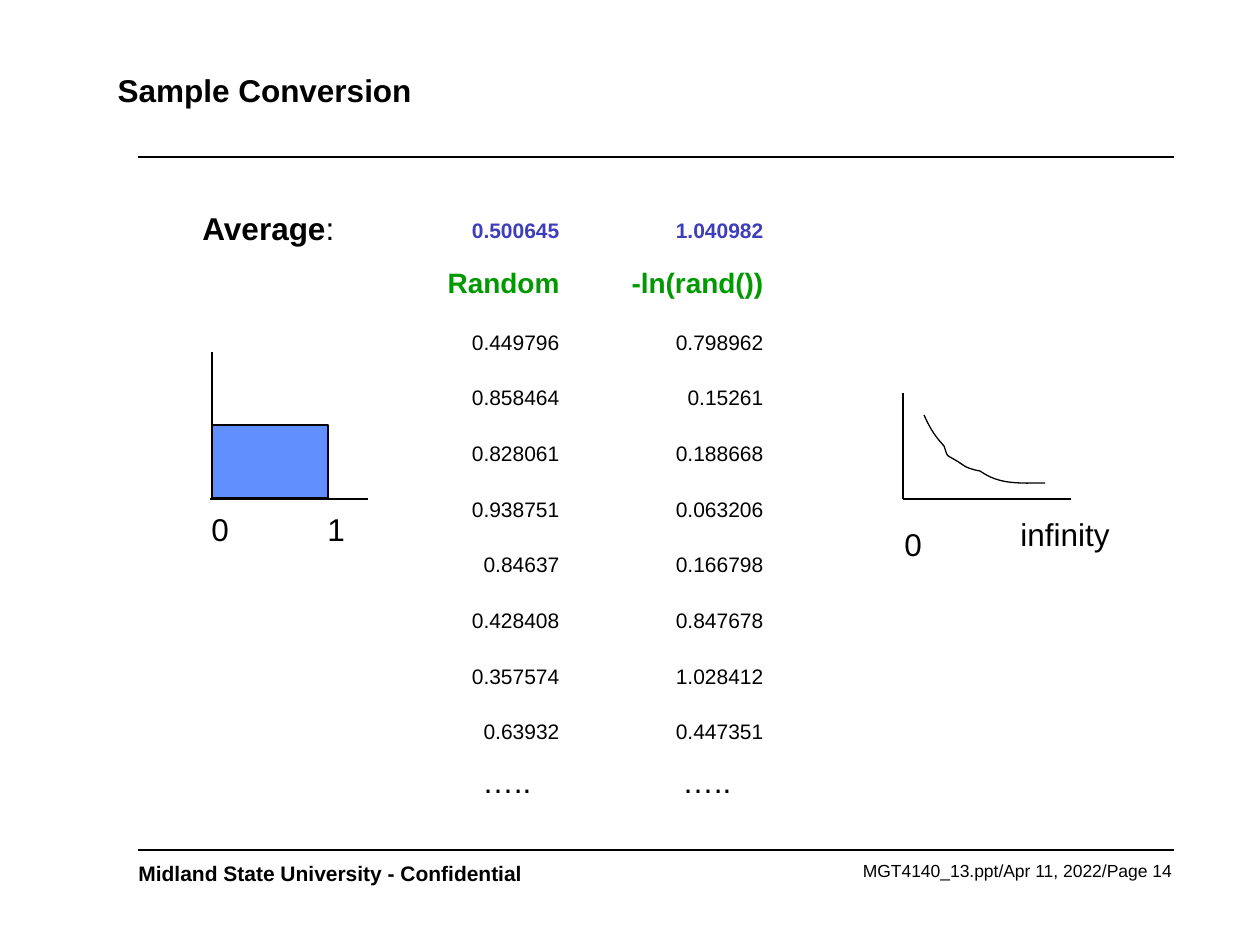
from lxml import etree
from pptx import Presentation
from pptx.dml.color import RGBColor
from pptx.enum.shapes import MSO_CONNECTOR, MSO_SHAPE
from pptx.enum.text import MSO_ANCHOR, MSO_AUTO_SIZE, PP_ALIGN
from pptx.oxml.ns import qn
from pptx.util import Emu, Pt

STRAIGHT = MSO_CONNECTOR.STRAIGHT
RECT = MSO_SHAPE.RECTANGLE
MIDDLE, BOTTOM = MSO_ANCHOR.MIDDLE, MSO_ANCHOR.BOTTOM
NONE, GROW = MSO_AUTO_SIZE.NONE, MSO_AUTO_SIZE.SHAPE_TO_FIT_TEXT
LEFT, RIGHT = PP_ALIGN.LEFT, PP_ALIGN.RIGHT

FONT = "Arial"
BLACK, BLUE, INDIGO, GREEN = "000000", "618FFD", "3E3EBC", "009900"
SCALE = 914400 / 126

ROWS = [
    ("0.500645", "1.040982"),
    ("Random", "-ln(rand())"),
    ("0.449796", "0.798962"),
    ("0.858464", "0.15261"),
    ("0.828061", "0.188668"),
    ("0.938751", "0.063206"),
    ("0.84637", "0.166798"),
    ("0.428408", "0.847678"),
    ("0.357574", "1.028412"),
    ("0.63932", "0.447351"),
]
HEADS = [
    {"size": 12, "color": INDIGO, "bold": True},
    {"size": 16, "color": GREEN, "bold": True},
]
BODY = {"size": 12}
START = (924, 415)
BENDS = [
    ((930, 428), (934, 435), (944, 446)),
    ((949, 460), (944, 452), (963, 465)),
    ((968, 469), (980, 471), (980, 471)),
    ((1000, 485), (1019, 483), (1045, 483)),
]


def px(*nums):
    """Turn pixel lengths into EMU."""
    return [Emu(round(n * SCALE)) for n in nums]


def tint(code):
    """Turn a hex string into a colour."""
    return RGBColor.from_string(code)


def write(frame, text, size=18, color=BLACK, bold=False, align=LEFT):
    """Add a formatted run to the first paragraph of a frame."""
    para = frame.paragraphs[0]
    para.alignment = align
    run = para.add_run()
    run.text = text
    font = run.font
    font.name, font.size, font.bold = FONT, Pt(size), bold
    font.color.rgb = tint(color)


def label(shapes, text, x, y, w, h=50, wrap=False, **form):
    """Add a text box and return its frame."""
    frame = shapes.add_textbox(*px(x, y, w, h)).text_frame
    frame.word_wrap = wrap
    frame.auto_size = GROW
    write(frame, text, **form)
    return frame


def stroke(shape, width=0.75):
    """Give a shape a black outline."""
    shape.line.color.rgb = tint(BLACK)
    shape.line.width = Pt(width)


def rule(shapes, x1, y1, x2, y2, width=0.75):
    """Draw a straight black line."""
    line = shapes.add_connector(STRAIGHT, *px(x1, y1, x2, y2))
    stroke(line, width)
    etree.SubElement(line._element.spPr, qn("a:effectLst"))


def trace(start, bends, steps=12):
    """Sample points along a chain of cubic curves."""
    spots = []
    for a, b, c in bends:
        for i in range(1, steps + 1):
            t = i / steps
            u = 1 - t
            spots.append(tuple(
                u**3 * p + 3 * u * u * t * q + 3 * u * t * t * r + t**3 * s
                for p, q, r, s in zip(start, a, b, c)))
        start = c
    return spots


def curve(shapes, start, bends):
    """Draw an open curve."""
    pen = shapes.build_freeform(*px(*start))
    pen.add_line_segments([px(*spot) for spot in trace(start, bends)], close=False)
    shape = pen.convert_to_shape()
    shape.fill.background()
    shape.shadow.inherit = False
    stroke(shape)


def block(shapes, x, y, w, h):
    """Draw a filled bar."""
    bar = shapes.add_shape(RECT, *px(x, y, w, h))
    bar.shadow.inherit = False
    bar.fill.solid()
    bar.fill.fore_color.rgb = tint(BLUE)
    stroke(bar)


def grid(shapes, rows, x, y, widths, h):
    """Add the plain table of samples."""
    table = shapes.add_table(len(rows), len(widths), *px(x, y, sum(widths), h)).table
    table.first_row = table.horz_banding = False
    for col, width in zip(table.columns, px(*widths)):
        col.width = width
    for i, row in enumerate(rows):
        form = HEADS[i] if i < len(HEADS) else BODY
        for j, text in enumerate(row):
            cell = table.cell(i, j)
            cell.fill.background()
            cell.vertical_anchor = BOTTOM
            write(cell.text_frame, text, align=RIGHT, **form)


def head(shape, text):
    """Place and fill the title."""
    shape.left, shape.top, shape.width, shape.height = px(105, 32, 1071, 116)
    frame = shape.text_frame
    frame.auto_size = NONE
    frame.vertical_anchor = MIDDLE
    write(frame, text, bold=True)


def frame_page(shapes):
    """Add the footer texts and the two page rules."""
    label(shapes, "MGT4140_13.ppt/Apr 11, 2022/Page 14", 703, 854, 481, 33,
          wrap=True, size=10, align=RIGHT)
    label(shapes, "Midland State University - Confidential", 126, 854, 484, 38,
          wrap=True, size=12, bold=True)
    for y in (157, 850):
        rule(shapes, 138, y, 1174, y, width=1)


def uniform(shapes):
    """Draw the uniform density from 0 to 1."""
    rule(shapes, 212, 352, 212, 499)
    block(shapes, 212, 425, 116, 73)
    for text, x in (("0", 199), ("1", 315)):
        label(shapes, text, x, 504, 43)
    rule(shapes, 210, 499, 368, 499)


def decay(shapes):
    """Draw the exponential density."""
    curve(shapes, START, BENDS)
    rule(shapes, 903, 393, 903, 499)
    rule(shapes, 903, 499, 1071, 499)


def main():
    """Build and save the slide."""
    deck = Presentation()
    deck.slide_width, deck.slide_height = px(1260, 945)
    slide = deck.slides.add_slide(deck.slide_layouts[5])
    shapes = slide.shapes
    head(shapes.title, "Sample Conversion")
    frame_page(shapes)
    grid(shapes, ROWS, 388, 194, (184, 204), 557)
    mean = label(shapes, "Average", 190, 203, 159, bold=True)
    write(mean, ":")
    for x in (470, 670):
        label(shapes, "…..", x, 756, 74)
    uniform(shapes.add_group_shape().shapes)
    decay(shapes.add_group_shape().shapes)
    label(shapes, "0", 892, 519, 43)
    label(shapes, "infinity", 1008, 509, 115)
    deck.save("out.pptx")


if __name__ == "__main__":
    main()
